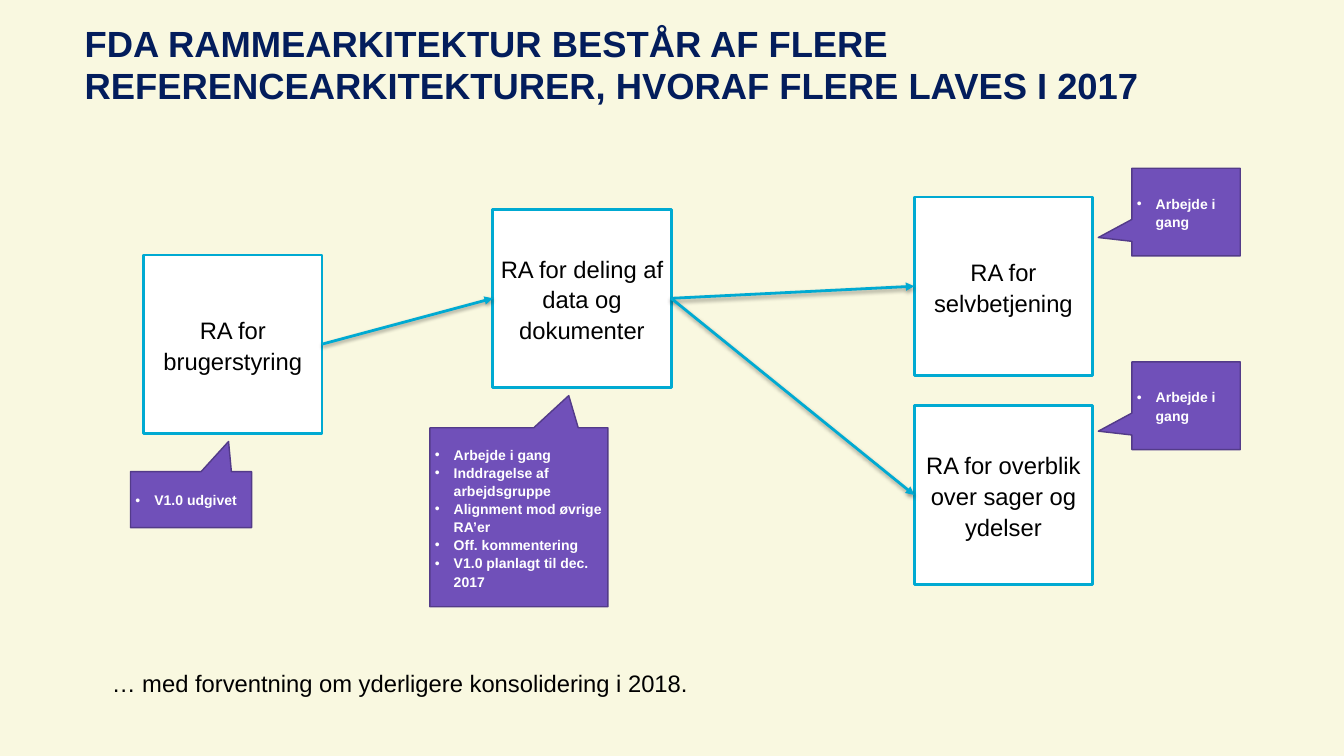
from lxml import etree
from pptx import Presentation
from pptx import util as u
from pptx.dml.color import RGBColor
from pptx.enum import shapes, text
from pptx.oxml import ns

HEX = {"paper": "F9F8E0", "navy": "031D5C", "white": "FFFFFF", "black": "000000",
       "cyan": "00AAD2", "violet": "7050B9", "plum": "533B89"}
FONT = "Arial"
SIDE = 8.99  # edge of the square boxes, cm
PAD = 0.25
HANG = int(u.Cm(0.95))

TITLE = {"size": u.Pt(52), "bold": True}
LABEL = {"size": u.Pt(34)}
NOTE = {"size": u.Pt(20), "bold": True}

# Boxes: left, top, label
BOXES = {
    "data": (24.84, 10.54, "RA for deling af data og dokumenter"),
    "user": (7.24, 12.85, "RA for brugerstyring"),
    "self": (46.08, 9.93, "RA for selvbetjening"),
    "view": (46.08, 20.45, "RA for overblik over sager og ydelser"),
}
LINKS = [("user", "data"), ("data", "self"), ("data", "view")]

# Callouts: place, tip, lines
NOTES = [
    ((6.58, 23.77, 6.1, 2.82), (0.31, -1.04), ["V1.0 udgivet"]),
    ((21.67, 21.56, 8.97, 9.02), (0.28, -0.68),
     ["Arbejde i gang", "Inddragelse af arbejdsgruppe", "Alignment mod øvrige RA’er",
      "Off. kommentering", "V1.0 planlagt til dec. 2017"]),
    ((57.05, 8.48, 5.46, 4.42), (-0.81, 0.29), ["Arbejde i gang"]),
    ((57.05, 18.24, 5.46, 4.42), (-0.81, 0.29), ["Arbejde i gang"]),
]


def color(name):
    return RGBColor.from_string(HEX[name])


def add_sub(node, tag, **attrs):
    return etree.SubElement(node, ns.qn(tag), attrs)


def add_dot(para):
    props = para._p.get_or_add_pPr()
    props.set("marL", str(HANG))
    props.set("indent", str(-HANG))
    add_sub(props, "a:buFont", typeface=FONT)
    add_sub(props, "a:buChar", char="•")


def write(shape, lines, look, ink, space=1.08, pad=0, dots=False, **frame):
    box = shape.text_frame
    base = {"word_wrap": True, "vertical_anchor": text.MSO_ANCHOR.TOP}
    for side in ("left", "top", "right", "bottom"):
        base["margin_" + side] = u.Cm(pad)
    align = frame.pop("align", text.PP_ALIGN.LEFT)
    for key, val in {**base, **frame}.items():
        setattr(box, key, val)
    for i, line in enumerate(lines):
        para = box.add_paragraph() if i else box.paragraphs[0]
        if dots:
            add_dot(para)
        para.alignment = align
        para.line_spacing = space
        run = para.add_run()
        run.text = line
        for key, val in {"name": FONT, **look}.items():
            setattr(run.font, key, val)
        run.font.color.rgb = color(ink)


def add_form(slide, kind, place, fill, edge, width):
    form = slide.shapes.add_shape(kind, *map(u.Cm, place))
    form.shadow.inherit = False
    form.fill.solid()
    form.fill.fore_color.rgb = color(fill)
    form.line.color.rgb = color(edge)
    form.line.width = u.Pt(width)
    return form


def add_box(slide, left, top, label):
    box = add_form(slide, shapes.MSO_SHAPE.RECTANGLE, (left, top, SIDE, SIDE),
                   "white", "cyan", 4)
    write(box, [label], LABEL, "black", pad=PAD, align=text.PP_ALIGN.CENTER,
          vertical_anchor=text.MSO_ANCHOR.MIDDLE)
    return box


def add_link(slide, start, end):
    link = slide.shapes.add_connector(shapes.MSO_CONNECTOR.STRAIGHT, 0, 0, 0, 0)
    link.begin_connect(start, 3)
    link.end_connect(end, 1)
    link.line.color.rgb = color("cyan")
    link.line.width = u.Pt(4)
    add_sub(link.line._get_or_add_ln(), "a:tailEnd", type="triangle")
    # Soft shadow straight below
    effects = add_sub(link._element.spPr, "a:effectLst")
    shade = add_sub(effects, "a:outerShdw", blurRad=str(u.Pt(6)), dist=str(u.Pt(3)),
                    dir="5400000", rotWithShape="0")
    tint = add_sub(shade, "a:srgbClr", val=HEX["black"])
    add_sub(tint, "a:alpha", val="38000")


def add_note(slide, place, tip, lines):
    note = add_form(slide, shapes.MSO_SHAPE.RECTANGULAR_CALLOUT, place,
                    "violet", "plum", 2)
    for i, val in enumerate(tip):
        note.adjustments[i] = val
    write(note, lines, NOTE, "white", pad=PAD, dots=True,
          vertical_anchor=text.MSO_ANCHOR.MIDDLE)


def add_text(slide, place, line, look, ink, **frame):
    area = slide.shapes.add_textbox(*map(u.Cm, place))
    write(area, [line], look, ink, **frame)


def main():
    deck = Presentation()
    deck.slide_width, deck.slide_height = u.Cm(67.74), u.Cm(38.1)
    slide = deck.slides.add_slide(deck.slide_layouts[6])
    slide.background.fill.solid()
    slide.background.fill.fore_color.rgb = color("paper")

    # Title
    add_text(slide, (4.27, 1.22, 59.16, 5.11),
             "FDA RAMMEARKITEKTUR BESTÅR AF FLERE REFERENCEARKITEKTURER, "
             "HVORAF FLERE LAVES I 2017", TITLE, "navy", space=0.96)

    # Architectures and their links
    boxes = {key: add_box(slide, *item) for key, item in BOXES.items()}
    for start, end in LINKS:
        add_link(slide, boxes[start], boxes[end])

    # Status callouts
    for item in NOTES:
        add_note(slide, *item)

    # Closing line
    add_text(slide, (5.64, 33.6, 29.34, 2.36),
             "… med forventning om yderligere konsolidering i 2018.",
             LABEL, "black", word_wrap=False)

    deck.save("out.pptx")


if __name__ == "__main__":
    main()
